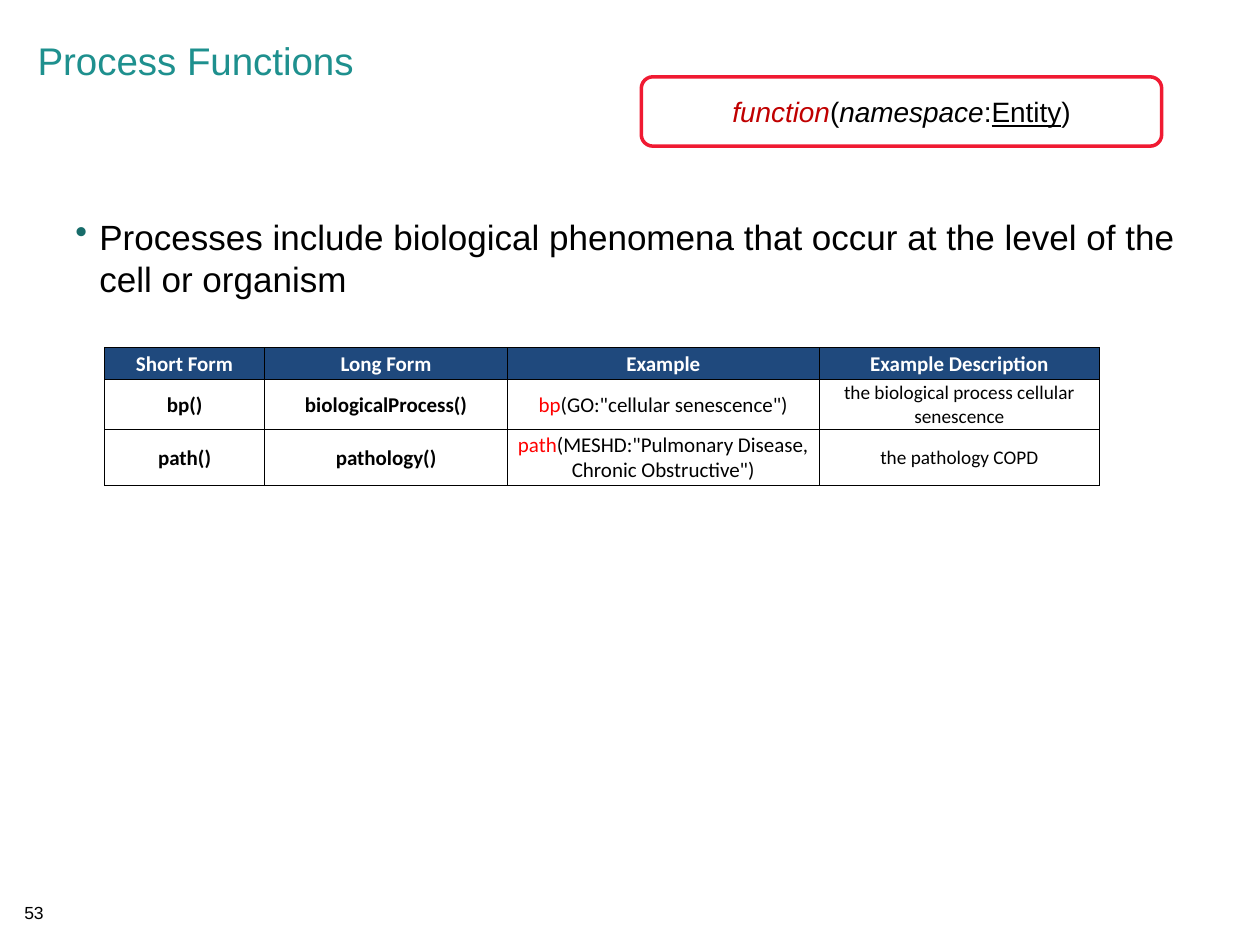
from lxml import etree
from pptx import Presentation
from pptx.dml.color import RGBColor
from pptx.enum import shapes, text
from pptx.oxml import ns
from pptx.util import Inches, Pt

BLACK, WHITE, RED, NAVY = "000000", "FFFFFF", "FF0000", "1F497D"

TITLE = "Process Functions"
BULLET = "Processes include biological phenomena that occur at the level of the cell or organism"
PAGE_NUMBER = "53"
SYNTAX = [
    ("function", {"italic": True, "color": "C00000"}),
    ("(", {}),
    ("namespace", {"italic": True}),
    (":", {}),
    ("Entity", {"underline": True}),
    (")", {}),
]
HEADERS = ["Short Form", "Long Form", "Example", "Example Description"]
FUNCTIONS = [
    ("bp", "biologicalProcess", '(GO:"cellular senescence")',
     "the biological process cellular senescence"),
    ("path", "pathology", '(MESHD:"Pulmonary Disease, Chronic Obstructive")',
     "the pathology COPD"),
]
COLUMN_WIDTHS = [1.27, 1.93, 2.47, 2.23]
ROW_HEIGHTS = [0.25, 0.4, 0.44]


def rgb(value):
    return RGBColor.from_string(value)


def style(font, size=None, name=None, color=None, bold=None, italic=None, underline=None):
    if size:
        font.size = Pt(size)
    if name:
        font.name = name
    if color:
        font.color.rgb = rgb(color)
    font.bold, font.italic, font.underline = bold, italic, underline


def write(para, spans, align=None, **look):
    para.alignment = align
    style(para.font, **look)
    for words, changes in spans:
        span = para.add_run()
        span.text = words
        if changes:
            style(span.font, **changes)


def add_text_box(page, left, top, width, height):
    box = page.shapes.add_textbox(Inches(left), Inches(top), Inches(width), Inches(height))
    box.text_frame.word_wrap = True
    return box.text_frame.paragraphs[0]


def add_element(parent, tag, **attributes):
    return etree.SubElement(parent, ns.qn(tag), attributes)


def add_bullet(para, color, indent):
    properties = para._p.get_or_add_pPr()
    properties.set("marL", str(Inches(indent)))
    properties.set("indent", str(-Inches(indent)))
    add_element(add_element(properties, "a:buClr"), "a:srgbClr", val=color)
    add_element(properties, "a:buChar", char="•")


def add_borders(cell, color, points):
    properties = cell._tc.get_or_add_tcPr()
    for side in ("a:lnL", "a:lnR", "a:lnT", "a:lnB"):
        line = add_element(properties, side, w=str(Pt(points)))
        add_element(add_element(line, "a:solidFill"), "a:srgbClr", val=color)


def fill_cell(cell, spans, fill=None, **look):
    cell.margin_left = cell.margin_right = cell.margin_top = Inches(0.01)
    cell.margin_bottom = 0
    cell.vertical_anchor = text.MSO_ANCHOR.MIDDLE
    add_borders(cell, BLACK, 0.5)
    if fill:
        cell.fill.solid()
        cell.fill.fore_color.rgb = rgb(fill)
    else:
        cell.fill.background()
    write(cell.text_frame.paragraphs[0], spans, text.PP_ALIGN.CENTER, name="Calibri", **look)


def add_function_table(page):
    table = page.shapes.add_table(
        len(ROW_HEIGHTS), len(COLUMN_WIDTHS), Inches(0.83), Inches(2.76),
        Inches(sum(COLUMN_WIDTHS)), Inches(sum(ROW_HEIGHTS))).table
    for column, width in zip(table.columns, COLUMN_WIDTHS):
        column.width = Inches(width)
    for row, height in zip(table.rows, ROW_HEIGHTS):
        row.height = Inches(height)
    for index, header in enumerate(HEADERS):
        fill_cell(table.cell(0, index), [(header, {})], NAVY, size=12, color=WHITE, bold=True)
    for row, (short, long, argument, description) in enumerate(FUNCTIONS, 1):
        contents = [
            ([(short + "()", {})], 12, True),
            ([(long + "()", {})], 12, True),
            ([(short, {"color": RED}), (argument, {})], 12, False),
            ([(description, {})], 11, False),
        ]
        for index, (spans, size, bold) in enumerate(contents):
            fill_cell(table.cell(row, index), spans, size=size, color=BLACK, bold=bold)


def add_syntax_box(page):
    box = page.shapes.add_shape(
        shapes.MSO_SHAPE.ROUNDED_RECTANGLE,
        Inches(5.09), Inches(0.61), Inches(4.13), Inches(0.55))
    box.shadow.inherit = False
    box.fill.solid()
    box.fill.fore_color.rgb = rgb(WHITE)
    box.line.color.rgb = rgb("F01A32")
    box.line.width = Pt(2)
    box.text_frame.vertical_anchor = text.MSO_ANCHOR.MIDDLE
    write(box.text_frame.paragraphs[0], SYNTAX, text.PP_ALIGN.CENTER,
          size=16, name="Arial", color=BLACK)


def main():
    deck = Presentation()
    deck.slide_width, deck.slide_height = Inches(10), Inches(7.5)
    page = deck.slides.add_slide(deck.slide_layouts[6])

    number = add_text_box(page, 0.06, 7.11, 0.42, 0.27)
    write(number, [(PAGE_NUMBER, {})], text.PP_ALIGN.CENTER, size=10, name="Arial", color=BLACK)

    title = add_text_box(page, 0.2, 0.29, 8.42, 0.9)
    title.line_spacing = 0.9
    write(title, [(TITLE, {})], size=22, name="Arial", color="1E908E")

    body = add_text_box(page, 0.5, 1.66, 9, 5.22)
    add_bullet(body, "176C6A", 0.19)
    write(body, [(BULLET, {})], size=20, name="Arial", color=BLACK)

    add_function_table(page)
    add_syntax_box(page)
    deck.save("out.pptx")


if __name__ == "__main__":
    main()
